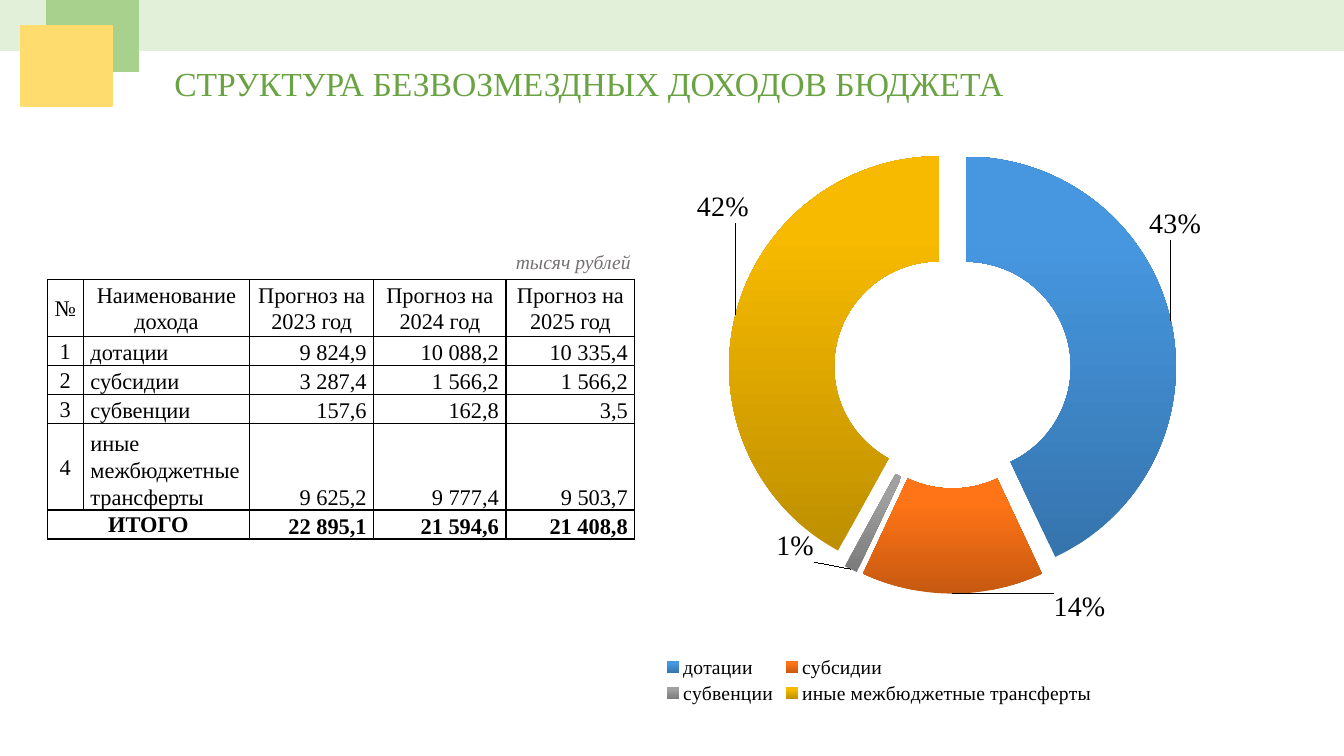
from lxml import etree
from pptx import Presentation
from pptx.chart.data import CategoryChartData
from pptx.dml.color import RGBColor
from pptx.enum.chart import XL_CHART_TYPE, XL_LEGEND_POSITION
from pptx.enum.shapes import MSO_SHAPE
from pptx.enum.text import MSO_ANCHOR, PP_ALIGN
from pptx.oxml import parse_xml
from pptx.util import Cm, Pt

RECT = MSO_SHAPE.RECTANGLE
RING = XL_CHART_TYPE.DOUGHNUT_EXPLODED
BELOW = XL_LEGEND_POSITION.BOTTOM
LEFT, MID, RIGHT = PP_ALIGN.LEFT, PP_ALIGN.CENTER, PP_ALIGN.RIGHT
CENTER, BOTTOM = MSO_ANCHOR.MIDDLE, MSO_ANCHOR.BOTTOM

FONT = "Times New Roman"
BLACK = RGBColor(0x00, 0x00, 0x00)
GREEN = RGBColor(0x6A, 0xA3, 0x43)
GREY = RGBColor(0x76, 0x71, 0x71)
PALE = RGBColor(0xE2, 0xF0, 0xD9)
LEAF = RGBColor(0xA9, 0xD1, 0x8E)
YELLOW = RGBColor(0xFF, 0xDC, 0x6D)
# Dark and light end of each slice
SHADES = [
    (RGBColor(0x36, 0x74, 0xAD), RGBColor(0x46, 0x97, 0xE0)),
    (RGBColor(0xC6, 0x59, 0x10), RGBColor(0xFF, 0x74, 0x16)),
    (RGBColor(0x7B, 0x7B, 0x7B), RGBColor(0xA0, 0xA0, 0xA0)),
    (RGBColor(0xBE, 0x8F, 0x00), RGBColor(0xF7, 0xBA, 0x00)),
]
NS_A = "http://schemas.openxmlformats.org/drawingml/2006/main"
NS_C = "http://schemas.openxmlformats.org/drawingml/2006/chart"


def style(par, size, color, align=LEFT, bold=False, italic=False):
    par.alignment = align
    for run in par.runs:
        font = run.font
        font.name, font.size, font.color.rgb = FONT, Pt(size), color
        font.bold, font.italic = bold, italic


def layout(**parts):
    """Return a manual chart layout; the parts are shares of the chart."""
    tags = "".join(f'<c:{key} val="{val}"/>' for key, val in parts.items())
    return parse_xml(f'<c:layout xmlns:c="{NS_C}"><c:manualLayout>{tags}'
                     "</c:manualLayout></c:layout>")


prs = Presentation()
prs.slide_width, prs.slide_height = Cm(33.87), Cm(19.05)
slide = prs.slides.add_slide(prs.slide_layouts[5])
shapes = slide.shapes

# Title
title = shapes.title
title.left, title.top = Cm(4.14), Cm(1.47)
title.width, title.height = Cm(21.77), Cm(1.27)
frame = title.text_frame
frame.text = "СТРУКТУРА БЕЗВОЗМЕЗДНЫХ ДОХОДОВ БЮДЖЕТА"
frame.word_wrap = False
frame.vertical_anchor = CENTER
style(frame.paragraphs[0], 24, GREEN)

# Band and corner squares
for x, y, w, h, color in [
    (0, 0, 33.87, 1.27, PALE),
    (1.19, 0, 2.31, 1.8, LEAF),
    (0.53, 0.64, 2.29, 2.03, YELLOW),
]:
    box = shapes.add_shape(RECT, Cm(x), Cm(y), Cm(w), Cm(h))
    box.shadow.inherit = False
    box.fill.solid()
    box.fill.fore_color.rgb = color
    box.line.color.rgb = color
    box.line.width = Pt(1)

# Table
rows = [
    ["№", "Наименование дохода", "Прогноз на 2023 год", "Прогноз на 2024 год",
     "Прогноз на 2025 год"],
    ["1", "дотации", "9 824,9", "10 088,2", "10 335,4"],
    ["2", "субсидии", "3 287,4", "1 566,2", "1 566,2"],
    ["3", "субвенции", "157,6", "162,8", "3,5"],
    ["4", "иные межбюджетные трансферты", "9 625,2", "9 777,4", "9 503,7"],
    ["ИТОГО", "", "22 895,1", "21 594,6", "21 408,8"],
]
widths = [0.91, 4.19, 3.13, 3.33, 3.25]
heights = [1.44, 0.73, 0.73, 0.73, 2.18, 0.73]
last = len(rows) - 1
table = shapes.add_table(len(rows), len(widths), Cm(1.19), Cm(7.04),
                         Cm(sum(widths)), Cm(sum(heights))).table
table.first_row = table.horz_banding = False
for col, width in zip(table.columns, widths):
    col.width = Cm(width)
for row, height in zip(table.rows, heights):
    row.height = Cm(height)
table.cell(last, 0).merge(table.cell(last, 1))

for r, row in enumerate(rows):
    for c, text in enumerate(row):
        cell = table.cell(r, c)
        cell.margin_left = cell.margin_right = Cm(0.18)
        cell.margin_top = cell.margin_bottom = 0
        head = r == 0 or c == 0
        cell.vertical_anchor = CENTER if head else BOTTOM
        if text:
            cell.text_frame.text = text
            par = cell.text_frame.paragraphs[0]
            par.line_spacing = 1.07
            align = MID if head else LEFT if c == 1 else RIGHT
            style(par, 16, BLACK, align, bold=r == last)
        props = cell._tc.get_or_add_tcPr()
        for side in ("lnL", "lnR", "lnT", "lnB"):
            props.append(parse_xml(
                f'<a:{side} xmlns:a="{NS_A}" w="12700"><a:solidFill>'
                f'<a:srgbClr val="{BLACK}"/></a:solidFill></a:{side}>'))
        cell.fill.background()

# Unit note
note = shapes.add_textbox(Cm(12.75), Cm(6.17), Cm(3.53), Cm(0.86))
frame = note.text_frame
frame.text = "тысяч рублей"
frame.word_wrap = False
style(frame.paragraphs[0], 14, GREY, italic=True)

# Ring chart
data = CategoryChartData()
data.categories = [row[1] for row in rows[1:last]]
data.add_series("Доля", [43, 14, 1, 42])
chart = shapes.add_chart(RING, Cm(12.14), Cm(2.74), Cm(20.04), Cm(15.11),
                         data).chart
chart.has_title = False
chart.font.name, chart.font.size = "Calibri", Pt(10)
chart.font.color.rgb = BLACK
chart.has_legend = True
legend = chart.legend
legend.position = BELOW
legend.include_in_layout = False
legend.font.name, legend.font.size = FONT, Pt(14)
legend.font.color.rgb = BLACK
legend._element.find(f"{{{NS_C}}}legendPos").addnext(
    layout(xMode="edge", yMode="edge", x=0.23, y=0.91, w=0.55, h=0.09))

area = chart._chartSpace.chart.plotArea
for old in area.findall(f"{{{NS_C}}}layout"):
    area.remove(old)
area.insert(0, layout(layoutTarget="inner", xMode="edge", yMode="edge",
                      x=0.322, y=0.085, w=0.54, h=0.701))

plot = chart.plots[0]
plot.vary_by_categories = True
plot._element.find(f"{{{NS_C}}}holeSize").set("val", "50")
series = plot.series[0]
for old in series._element.findall(f"{{{NS_C}}}explosion"):
    series._element.remove(old)
for i, shades in enumerate(SHADES):
    form = series.points[i].format
    form.fill.gradient()
    form.fill.gradient_angle = 90
    for stop, color, place in zip(form.fill.gradient_stops, shades, (0, 0.8)):
        stop.color.rgb, stop.position = color, place
    form.line.fill.background()
    point = form.fill._xPr.getparent()
    burst = etree.Element(f"{{{NS_C}}}explosion", val="13")
    point.find(f"{{{NS_C}}}spPr").addprevious(burst)

# Percent labels, moved off the ring
labels = series.data_labels
labels.show_percentage = True
labels.show_value = False
labels.number_format = "0%"
labels.number_format_is_linked = False
labels.font.name, labels.font.size = FONT, Pt(20)
labels.font.color.rgb = BLACK
root = labels._element
shifts = [(0.07, -0.18), (0.16, 0.11), (-0.1, 0.04), (-0.08, -0.2)]
flags = "".join(
    f'<c:show{name} val="{int(name == "Percent")}"/>'
    for name in ("LegendKey", "Val", "CatName", "SerName", "Percent",
                 "BubbleSize"))
for i, (x, y) in enumerate(shifts):
    label = parse_xml(f'<c:dLbl xmlns:c="{NS_C}"><c:idx val="{i}"/>{flags}'
                      "</c:dLbl>")
    label.insert(1, layout(x=x, y=y))
    root.insert(i, label)

prs.save("out.pptx")
